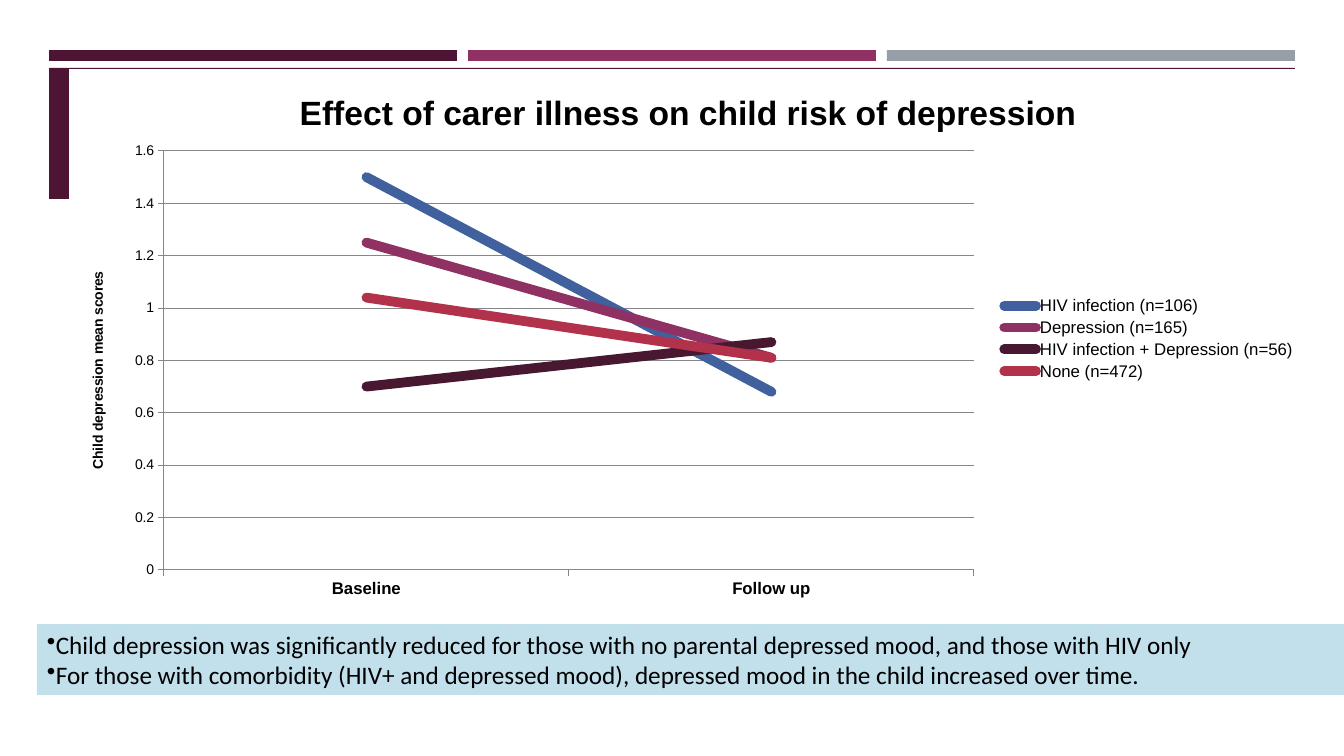
from lxml import etree
from pptx import Presentation
from pptx.chart.data import CategoryChartData
from pptx.dml.color import RGBColor
from pptx.enum.chart import XL_CHART_TYPE, XL_LEGEND_POSITION, XL_MARKER_STYLE, XL_TICK_MARK
from pptx.enum.shapes import MSO_SHAPE
from pptx.enum.text import MSO_ANCHOR, PP_ALIGN
from pptx.oxml import parse_xml
from pptx.oxml.ns import nsdecls, qn
from pptx.util import Pt

LINE = XL_CHART_TYPE.LINE
RIGHT = XL_LEGEND_POSITION.RIGHT
NO_MARKER = XL_MARKER_STYLE.NONE
OUTSIDE = XL_TICK_MARK.OUTSIDE
RECT = MSO_SHAPE.RECTANGLE
TOP = MSO_ANCHOR.TOP
LEFT = PP_ALIGN.LEFT

PLUM = RGBColor(0x4D, 0x14, 0x34)
MAGENTA = RGBColor(0x90, 0x31, 0x63)
SLATE = RGBColor(0x96, 0x9F, 0xA7)
BLUE = RGBColor(0x40, 0x61, 0x9D)
DARK = RGBColor(0x48, 0x18, 0x31)
RED = RGBColor(0xB2, 0x32, 0x4B)
PALE_BLUE = RGBColor(0xC2, 0xE0, 0xEB)
GRAY = RGBColor(0x86, 0x86, 0x86)
BLACK = RGBColor(0, 0, 0)

SERIES = [
    ("HIV infection (n=106)", (1.5, 0.68), BLUE),
    ("Depression (n=165)", (1.25, 0.81), MAGENTA),
    ("HIV infection + Depression (n=56)", (0.7, 0.87), DARK),
    ("None (n=472)", (1.04, 0.81), RED),
]
FINDINGS = [
    "Child depression was significantly reduced for those with no parental depressed mood, "
    "and those with HIV only",
    "For those with comorbidity (HIV+ and depressed mood), depressed mood in the child "
    "increased over time.",
]


def px(n):
    return round(n * 914400 / 100.8)


def set_font(font, size=10, bold=False, name="Arial"):
    font.size, font.bold, font.name = Pt(size), bold, name
    font.color.rgb = BLACK


def set_title(owner, text, **fmt):
    tf = owner.text_frame
    tf.text = text
    set_font(tf.paragraphs[0].runs[0].font, bold=True, **fmt)


class SlideBuilder:
    def __init__(self, slide, font="Calibri", size=18):
        self.s, self.font, self.size = slide, font, size

    def rect(self, x, y, w, h, fill):
        sp = self.s.shapes.add_shape(RECT, px(x), px(y), px(w), px(h))
        sp.shadow.inherit = False
        sp.fill.solid()
        sp.fill.fore_color.rgb = fill
        sp.line.fill.background()
        return sp

    def bullets(self, x, y, w, h, fill, items):
        tf = self.rect(x, y, w, h, fill).text_frame
        tf.word_wrap = True
        tf.vertical_anchor = TOP
        for i, text in enumerate(items):
            p = tf.add_paragraph() if i else tf.paragraphs[0]
            p.alignment = LEFT
            r = p.add_run()
            r.text = text
            set_font(r.font, self.size, name=self.font)
            bullet = etree.SubElement(p._p.get_or_add_pPr(), qn("a:buChar"))
            bullet.set("char", "•")

    def line_chart(self, x, y, w, h, plot, title, axis_title, categories, series):
        data = CategoryChartData()
        data.categories = categories
        for name, values, _ in series:
            data.add_series(name, values)
        chart = self.s.shapes.add_chart(LINE, px(x), px(y), px(w), px(h), data).chart
        set_font(chart.font, name=self.font)
        chart.has_title = True
        set_title(chart.chart_title, title, size=24)
        chart.has_legend = True
        chart.legend.position = RIGHT
        chart.legend.include_in_layout = False
        set_font(chart.legend.font, 12)
        for s, (_, _, color) in zip(chart.plots[0].series, series):
            s.smooth = False
            s.marker.style = NO_MARKER
            s.format.line.width = Pt(7)
            s.format.line.color.rgb = color
            s.format.line._ln.set("cap", "rnd")
        self.axes(chart, axis_title)
        self.plot_area(chart, (x, y, w, h), plot)

    def axes(self, chart, axis_title):
        cat, val = chart.category_axis, chart.value_axis
        for axis in (cat, val):
            axis.major_tick_mark = OUTSIDE
            axis.format.line.color.rgb = GRAY
        set_font(cat.tick_labels.font, 12, bold=True)
        set_font(val.tick_labels.font)
        val.minimum_scale, val.maximum_scale, val.major_unit = 0, 1.6, 0.2
        val.has_major_gridlines = True
        val.major_gridlines.format.line.color.rgb = GRAY
        val.has_title = True
        set_title(val.axis_title, axis_title)

    def plot_area(self, chart, frame, plot):
        x, y, w, h = frame
        left, top, width, height = plot
        shares = {"x": (left - x) / w, "y": (top - y) / h, "w": width / w, "h": height / h}
        area = chart._chartSpace.find(".//" + qn("c:plotArea"))
        for old in area.findall(qn("c:layout")):
            area.remove(old)
        layout = etree.Element(qn("c:layout"))
        manual = etree.SubElement(layout, qn("c:manualLayout"))
        settings = {"layoutTarget": "inner", "xMode": "edge", "yMode": "edge"}
        settings.update((k, f"{v:.4f}") for k, v in shares.items())
        for tag, value in settings.items():
            etree.SubElement(manual, qn("c:" + tag)).set("val", value)
        area.insert(0, layout)
        background = parse_xml(
            f'<c:spPr {nsdecls("c", "a")}><a:solidFill><a:srgbClr val="FFFFFF"/></a:solidFill>'
            "<a:ln><a:noFill/></a:ln></c:spPr>"
        )
        chart._chartSpace.find(qn("c:txPr")).addprevious(background)


def main():
    prs = Presentation()
    prs.slide_width, prs.slide_height = px(1344), px(756)
    b = SlideBuilder(prs.slides.add_slide(prs.slide_layouts[6]))
    for i, color in enumerate((PLUM, MAGENTA, SLATE)):
        b.rect(49 + 419 * i, 50, 408, 11, color)
    b.rect(49, 68, 1246, 131, PLUM)
    b.line_chart(
        69, 69, 1238, 539,
        plot=(164, 151, 810, 419),
        title="Effect of carer illness on child risk of depression",
        axis_title="Child depression mean scores",
        categories=("Baseline", "Follow up"),
        series=SERIES,
    )
    b.bullets(37, 624, 1307, 71, PALE_BLUE, FINDINGS)
    prs.save("out.pptx")


if __name__ == "__main__":
    main()
